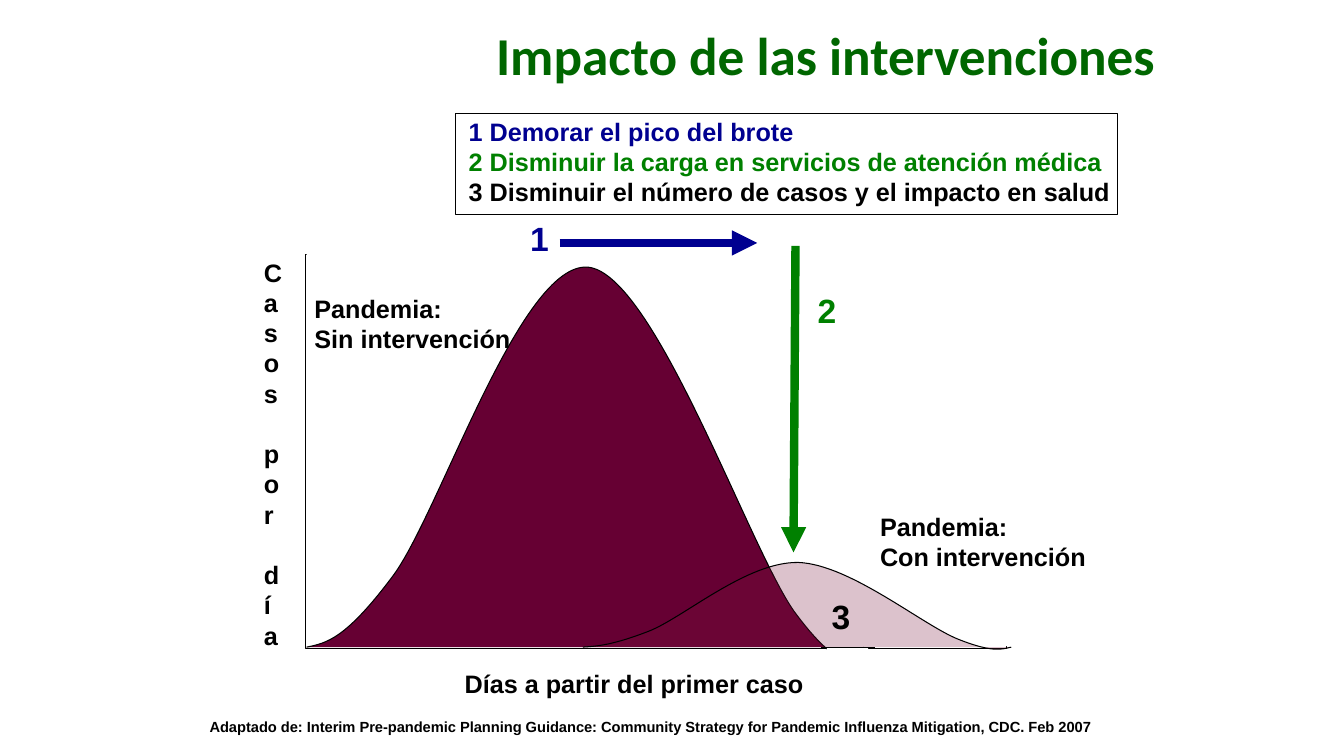
from dataclasses import dataclass
from typing import Optional

from lxml.etree import SubElement
from pptx import Presentation
from pptx.dml.color import RGBColor
from pptx.enum.shapes import MSO_CONNECTOR, MSO_SHAPE
from pptx.enum.text import MSO_ANCHOR as Anchor, MSO_AUTO_SIZE as AutoSize, PP_ALIGN as Align
from pptx.oxml.ns import qn
from pptx.util import Emu, Pt

PX = 9144
BLACK, WHITE, BLUE, GREEN = "000000", "FFFFFF", "000090", "008000"
HAIRLINE = 0.75
BASELINE = 642


@dataclass(frozen=True)
class Panel:
    box: tuple[int, int, int, int]
    fill: Optional[str] = None
    outline: Optional[str] = None


@dataclass(frozen=True)
class Curve:
    points: list[tuple[int, int]]
    fill: str
    opacity: int = 100


@dataclass(frozen=True)
class Segment:
    start: tuple[int, int]
    end: tuple[int, int]
    color: str
    width: float
    arrow: bool = False


@dataclass(frozen=True)
class Label:
    box: tuple[int, int, int, int]
    lines: list[tuple[str, str]]
    size: float = 18
    wrap: bool = False


AXES = Panel((303, 252, 695, 391), outline=BLACK)
LEGEND_FRAME = Panel((452, 113, 656, 100), outline=BLACK)
MASKS = [
    Panel((820, BASELINE, 41, 12), WHITE),
    Panel((304, 217, 702, 45), WHITE),
    Panel((989, 258, 48, 383), WHITE),
]
EPIDEMICS = [
    Curve([(304, BASELINE), (324, 638), (343, 634), (390, 571),
           (436, 509), (516, 260), (583, 265),
           (649, 271), (743, 544), (788, 607),
           (834, 669), (846, 655), (857, BASELINE)], "660033"),
    Curve([(578, BASELINE), (593, 641), (608, 640), (644, 626),
           (679, 612), (741, 557), (792, 558),
           (843, 560), (915, 620), (950, 634),
           (985, 648), (994, 644), (1003, BASELINE)], "7B173D", 26),
]
SEGMENTS = [
    Segment((814, BASELINE), (868, BASELINE), BLACK, HAIRLINE),
    Segment((555, 241), (751, 241), BLUE, 6, True),
    Segment((789, 244), (787, 548), GREEN, 6, True),
]
LABELS = [
    Label((516, 211, 39, 50), [("1", BLUE)], 24),
    Label((801, 283, 39, 50), [("2", GREEN)], 24),
    Label((815, 586, 39, 50), [("3", BLACK)], 24),
    Label((455, 110, 663, 101), [
        ("1 Demorar el pico del brote", BLUE),
        ("2 Disminuir la carga en servicios de atención médica", GREEN),
        ("3 Disminuir el número de casos y el impacto en salud", BLACK)]),
    Label((252, 250, 23, 343), [("Casos por día", BLACK)], wrap=True),
    Label((451, 658, 356, 40), [("Días a partir del primer caso", BLACK)]),
    Label((302, 286, 215, 70), [("Pandemia:", BLACK), ("Sin intervención", BLACK)]),
    Label((863, 502, 224, 70), [("Pandemia:", BLACK), ("Con intervención", BLACK)]),
    Label((198, 707, 941, 28), [(
        "Adaptado de: Interim Pre-pandemic Planning Guidance: Community Strategy "
        "for Pandemic Influenza Mitigation, CDC. Feb 2007", BLACK)], 10.5, True),
]


def emu(lengths) -> list[Emu]:
    return [Emu(length * PX) for length in lengths]


def paint(color_format, color: str) -> None:
    color_format.rgb = RGBColor.from_string(color)


def apply(target, values: dict) -> None:
    for name, value in values.items():
        setattr(target, name, value)


def style_shape(shape, fill: Optional[str], outline: Optional[str]) -> None:
    shape.shadow.inherit = False
    if fill:
        shape.fill.solid()
        paint(shape.fill.fore_color, fill)
    else:
        shape.fill.background()
    if outline:
        paint(shape.line.color, outline)
        shape.line.width = Pt(HAIRLINE)
    else:
        shape.line.fill.background()


def style_run(run, font: str, size: float, color: str) -> None:
    apply(run.font, {"name": font, "size": Pt(size), "bold": True})
    paint(run.font.color, color)


def draw_panel(slide, panel: Panel) -> None:
    rectangle = slide.shapes.add_shape(MSO_SHAPE.RECTANGLE, *emu(panel.box))
    style_shape(rectangle, panel.fill, panel.outline)


def draw_curve(slide, curve: Curve) -> None:
    builder = slide.shapes.build_freeform(*curve.points[0], scale=PX)
    builder.add_line_segments(curve.points[1:], close=False)
    epidemic = builder.convert_to_shape()
    style_shape(epidemic, curve.fill, BLACK)
    outline = next(epidemic._element.iter(qn("a:path")))
    steps = outline.findall(qn("a:lnTo"))
    for first in range(0, len(steps), 3):
        bezier = SubElement(outline, qn("a:cubicBezTo"))
        for step in steps[first:first + 3]:
            bezier.append(step[0])
            outline.remove(step)
    if curve.opacity < 100:
        tint = epidemic._element.spPr.find(qn("a:solidFill"))[0]
        SubElement(tint, qn("a:alpha"), val=str(curve.opacity * 1000))


def draw_segment(slide, segment: Segment) -> None:
    connector = slide.shapes.add_connector(
        MSO_CONNECTOR.STRAIGHT, *emu(segment.start + segment.end))
    paint(connector.line.color, segment.color)
    connector.line.width = Pt(segment.width)
    properties = connector._element.spPr
    if segment.arrow:
        SubElement(properties.find(qn("a:ln")), qn("a:tailEnd"), type="triangle")
    SubElement(properties, qn("a:effectLst"))


def draw_label(slide, label: Label) -> None:
    frame = slide.shapes.add_textbox(*emu(label.box)).text_frame
    apply(frame, {"word_wrap": label.wrap, "auto_size": AutoSize.SHAPE_TO_FIT_TEXT})
    for index, (words, color) in enumerate(label.lines):
        paragraph = frame.add_paragraph() if index else frame.paragraphs[0]
        run = paragraph.add_run()
        run.text = words
        style_run(run, "Arial", label.size, color)


def draw_title(slide, words: str) -> None:
    title = slide.shapes.title
    apply(title, dict(zip(("left", "top", "width", "height"), emu((377, 17, 779, 74)))))
    frame = title.text_frame
    apply(frame, {"word_wrap": True, "auto_size": AutoSize.SHAPE_TO_FIT_TEXT,
                  "vertical_anchor": Anchor.MIDDLE})
    paragraph = frame.paragraphs[0]
    paragraph.alignment = Align.RIGHT
    run = paragraph.add_run()
    run.text = words
    style_run(run, "Calibri", 38, "006600")
    properties = run._r.get_or_add_rPr()
    effects = SubElement(properties, qn("a:effectLst"))
    shadow = SubElement(effects, qn("a:outerShdw"), dist="25400", dir="2700000")
    SubElement(shadow, qn("a:srgbClr"), val=BLACK)
    properties.find(qn("a:solidFill")).addnext(effects)


def main() -> None:
    deck = Presentation()
    deck.slide_width, deck.slide_height = emu((1333, 750))
    slide = deck.slides.add_slide(deck.slide_layouts.get_by_name("Title Only"))
    draw_title(slide, "Impacto de las intervenciones")
    draw_panel(slide, AXES)
    for epidemic in EPIDEMICS:
        draw_curve(slide, epidemic)
    for mask in MASKS:
        draw_panel(slide, mask)
    for segment in SEGMENTS:
        draw_segment(slide, segment)
    for label in LABELS:
        draw_label(slide, label)
    draw_panel(slide, LEGEND_FRAME)
    deck.save("out.pptx")


if __name__ == "__main__":
    main()
